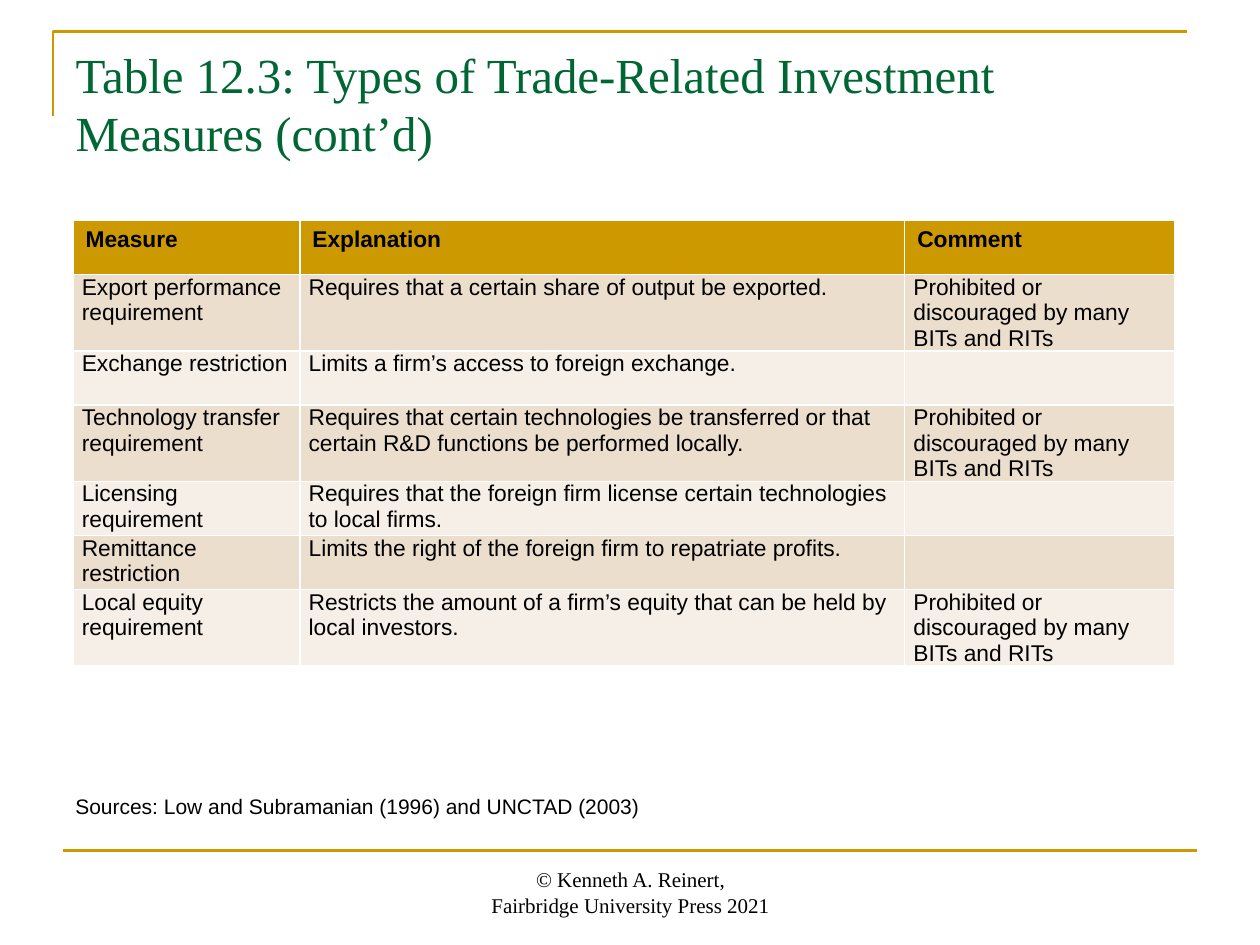
from pptx import Presentation
from pptx.dml.color import RGBColor
from pptx.enum.shapes import MSO_CONNECTOR
from pptx.enum.text import MSO_ANCHOR, PP_ALIGN
from pptx.oxml.ns import qn
from pptx.util import Inches, Pt
from lxml import etree

# Content
TITLE = "Table 12.3: Types of Trade-Related Investment Measures (cont’d)"
PROHIBITED = "Prohibited or discouraged by many BITs and RITs"
ROWS = [
    ("Measure", "Explanation", "Comment"),
    ("Export performance requirement",
     "Requires that a certain share of output be exported.", PROHIBITED),
    ("Exchange restriction", "Limits a firm’s access to foreign exchange.", ""),
    ("Technology transfer requirement",
     "Requires that certain technologies be transferred or that certain R&D "
     "functions be performed locally.", PROHIBITED),
    ("Licensing requirement",
     "Requires that the foreign firm license certain technologies to local firms.", ""),
    ("Remittance restriction",
     "Limits the right of the foreign firm to repatriate profits.", ""),
    ("Local equity requirement",
     "Restricts the amount of a firm’s equity that can be held by local investors.",
     PROHIBITED),
]
SOURCES = "Sources: Low and Subramanian (1996) and UNCTAD (2003)"
FOOTER = "© Kenneth A. Reinert,\nFairbridge University Press 2021"

# Style
GOLD = RGBColor(0xCC, 0x99, 0x00)
GREEN = RGBColor(0x00, 0x66, 0x33)
BLACK = RGBColor(0x00, 0x00, 0x00)
BANDS = (RGBColor(0xEC, 0xDE, 0xCC), RGBColor(0xF6, 0xEF, 0xE7))
SERIF, SANS = "Times New Roman", "Arial"
COLUMN_WIDTHS = (1.8, 4.8, 2.14)
ROW_HEIGHT = 0.43
LEFT, CENTER = PP_ALIGN.LEFT, PP_ALIGN.CENTER
TOP, BOTTOM = MSO_ANCHOR.TOP, MSO_ANCHOR.BOTTOM


def style_text(text_frame, font_name, size, color, align=LEFT, bold=False):
    for paragraph in text_frame.paragraphs:
        paragraph.alignment = align
        for run in paragraph.runs:
            run.font.name = font_name
            run.font.size = Pt(size)
            run.font.bold = bold
            run.font.color.rgb = color


def add_text(slide, text, box, font_name, align, anchor):
    text_frame = slide.shapes.add_textbox(*map(Inches, box)).text_frame
    text_frame.word_wrap = True
    text_frame.vertical_anchor = anchor
    text_frame.text = text
    style_text(text_frame, font_name, 12, BLACK, align)


def style_line(shape):
    shape.line.color.rgb = GOLD
    shape.line.width = Pt(1.5)


presentation = Presentation()
presentation.slide_width, presentation.slide_height = Inches(10), Inches(7.5)
slide = presentation.slides.add_slide(presentation.slide_layouts[5])

# Corner rule and footer rule
builder = slide.shapes.build_freeform(Inches(0.42), Inches(0.92))
builder.add_line_segments(
    [(Inches(0.42), Inches(0.25)), (Inches(9.42), Inches(0.25))], close=False)
corner = builder.convert_to_shape()
corner.shadow.inherit = False
corner.fill.background()
style_line(corner)

footer_rule = slide.shapes.add_connector(
    MSO_CONNECTOR.STRAIGHT, Inches(0.5), Inches(6.75), Inches(9.5), Inches(6.75))
style_line(footer_rule)
etree.SubElement(footer_rule._element.spPr, qn("a:effectLst"))

# Title
title = slide.shapes.title
title.left, title.top = Inches(0.5), Inches(0.3)
title.width, title.height = Inches(9), Inches(1.25)
title.text_frame.text = TITLE
title.text_frame.vertical_anchor = TOP
style_text(title.text_frame, SERIF, 28, GREEN)

# Table
table = slide.shapes.add_table(
    len(ROWS), len(COLUMN_WIDTHS), Inches(0.58), Inches(1.75),
    Inches(sum(COLUMN_WIDTHS)), Inches(ROW_HEIGHT * len(ROWS))).table
for column, width in zip(table.columns, COLUMN_WIDTHS):
    column.width = Inches(width)
for row_index, texts in enumerate(ROWS):
    header = row_index == 0
    table.rows[row_index].height = Inches(ROW_HEIGHT)
    for column_index, text in enumerate(texts):
        cell = table.cell(row_index, column_index)
        cell.fill.solid()
        cell.fill.fore_color.rgb = GOLD if header else BANDS[(row_index - 1) % 2]
        if text:
            cell.text_frame.text = text
            style_text(cell.text_frame, SANS, 13, BLACK, bold=header)
            if not header:
                cell.margin_left = cell.margin_right = Inches(0.07)
                cell.margin_top = cell.margin_bottom = 0

# Sources and footer
add_text(slide, SOURCES, (0.5, 6.25, 9, 0.3), SANS, LEFT, TOP)
add_text(slide, FOOTER, (3.42, 6.83, 3.17, 0.5), SERIF, CENTER, BOTTOM)

presentation.save("out.pptx")
